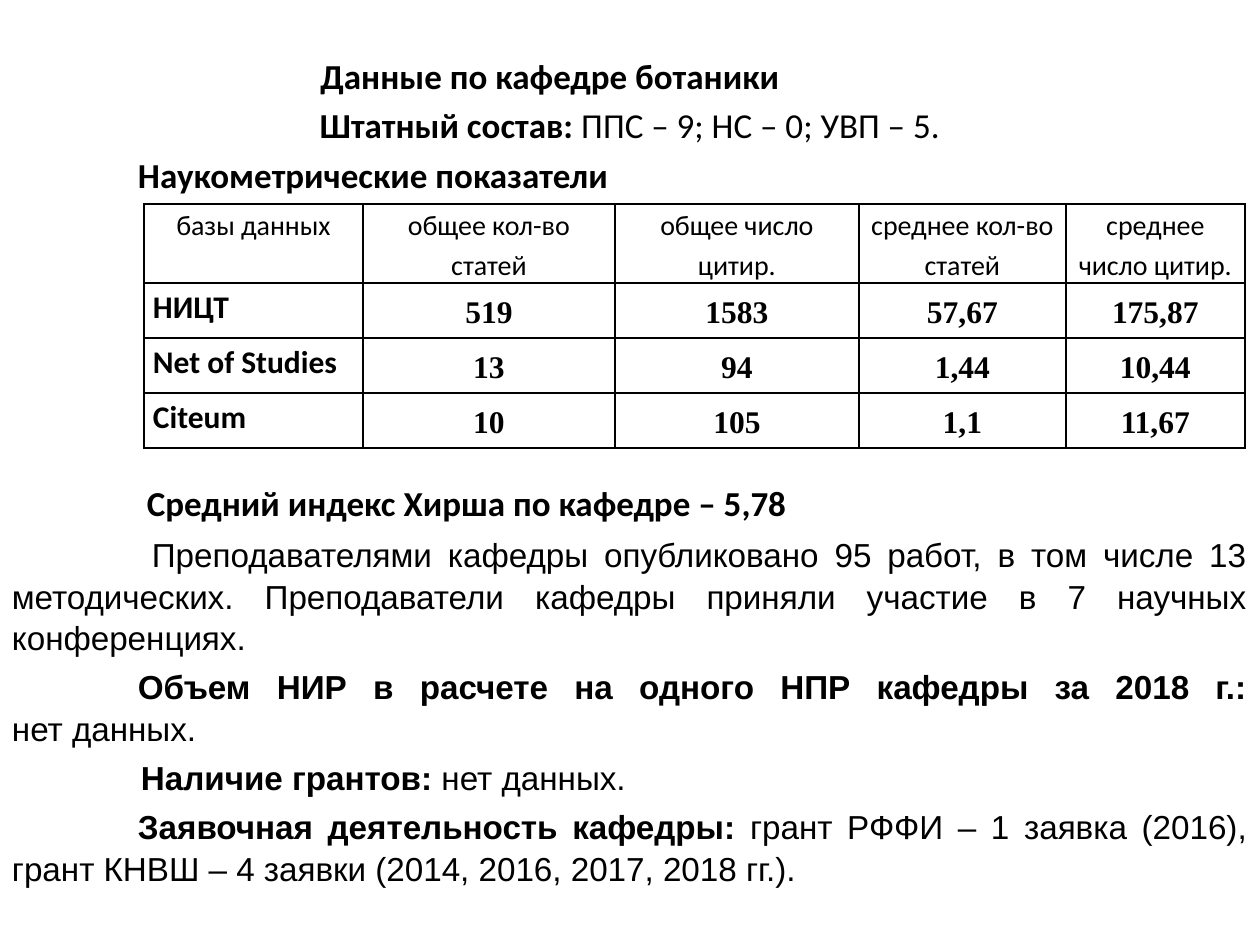
from lxml import etree
from pptx import Presentation
from pptx.dml.color import RGBColor
from pptx.enum.text import MSO_ANCHOR, PP_ALIGN
from pptx.oxml.ns import qn
from pptx.util import Pt

PX = 914400 // 126
LEFT, CENTER, JUSTIFY = PP_ALIGN.LEFT, PP_ALIGN.CENTER, PP_ALIGN.JUSTIFY
TOP, MIDDLE = MSO_ANCHOR.TOP, MSO_ANCHOR.MIDDLE


def px(n):
    return n * PX


def rgb(color):
    return RGBColor.from_string(color)


class Deck:
    ink = "000000"
    head_font, body_font, number_font = "Calibri", "Arial", "Times New Roman"

    def __init__(self, prs):
        self.s = prs.slides.add_slide(prs.slide_layouts[6])

    def run(self, p, text, font, size, bold):
        r = p.add_run()
        r.text = text
        r.font.name, r.font.size, r.font.bold = font, Pt(size), bold
        r.font.color.rgb = rgb(self.ink)

    def box(self, x, y, w, h):
        tf = self.s.shapes.add_textbox(px(x), px(y), px(w), px(h)).text_frame
        tf.word_wrap = True
        tf.margin_left = tf.margin_top = tf.margin_right = tf.margin_bottom = 0
        return tf

    def heading(self, x, y, w, align, runs):
        p = self.box(x, y, w, 43).paragraphs[0]
        p.alignment = align
        for text, bold in runs:
            self.run(p, text, self.head_font, 20, bold)

    def body(self, x, y, w, h, paragraphs):
        tf = self.box(x, y, w, h)
        for i, (indent, runs) in enumerate(paragraphs):
            p = tf.add_paragraph() if i else tf.paragraphs[0]
            p.alignment, p.line_spacing = JUSTIFY, 1.05
            p.space_before = Pt(4 if i else 0)
            pPr = p._p.get_or_add_pPr()
            pPr.set("marL", "0")
            pPr.set("indent", str(px(indent)))
            for text, bold in runs:
                if text == "\n":
                    p.add_line_break()
                else:
                    self.run(p, text, self.body_font, 19, bold)

    def border(self, cell):
        tcPr = cell._tc.get_or_add_tcPr()
        for side in ("lnL", "lnR", "lnT", "lnB"):
            ln = etree.SubElement(tcPr, qn("a:" + side), w=str(Pt(1)))
            fill = etree.SubElement(ln, qn("a:solidFill"))
            etree.SubElement(fill, qn("a:srgbClr"), val=self.ink)

    def cell(self, cell, text, font, size, bold, align, anchor):
        self.border(cell)
        cell.fill.background()
        cell.margin_left = cell.margin_right = px(9)
        cell.margin_top = cell.margin_bottom = 0
        cell.vertical_anchor = anchor
        p = cell.text_frame.paragraphs[0]
        p.alignment, p.line_spacing = align, 1.15
        self.run(p, text, font, size, bold)

    def table(self, x, y, widths, heights, rows):
        t = self.s.shapes.add_table(len(rows), len(widths), px(x), px(y),
                                    px(sum(widths)), px(sum(heights))).table
        t.first_row = t.horz_banding = False
        for col, w in zip(t.columns, widths):
            col.width = px(w)
        for i, (h, row) in enumerate(zip(heights, rows)):
            t.rows[i].height = px(h)
            for j, text in enumerate(row):
                if i == 0:
                    style = self.head_font, 16, False, CENTER, TOP
                elif j == 0:
                    style = self.head_font, 18, True, JUSTIFY, TOP
                else:
                    style = self.number_font, 18, True, CENTER, MIDDLE
                self.cell(t.cell(i, j), text, *style)


def main():
    prs = Presentation()
    prs.slide_width, prs.slide_height = px(1260), px(945)
    deck = Deck(prs)

    deck.heading(0, 54, 1100, CENTER, [("Данные по кафедре ботаники", True)])
    deck.heading(0, 103, 1260, CENTER, [
        ("Штатный состав:", True), (" ППС – 9; НС – 0; УВП – 5.", False)])
    deck.heading(138, 153, 1100, LEFT, [("Наукометрические показатели", True)])

    deck.table(144, 204, [219, 252, 244, 207, 179], [79, 55, 55, 55], [
        ["базы данных", "общее кол-во статей", "общее число цитир.",
         "среднее кол-во статей", "среднее число цитир."],
        ["НИЦТ", "519", "1583", "57,67", "175,87"],
        ["Net of Studies", "13", "94", "1,44", "10,44"],
        ["Citeum", "10", "105", "1,1", "11,67"],
    ])

    deck.heading(147, 482, 1100, LEFT, [
        ("Средний индекс Хирша по кафедре – 5,78", True)])
    deck.body(12, 532, 1235, 345, [
        (140, [("Преподавателями кафедры опубликовано 95 работ, в том числе 13 "
                "методических. Преподаватели кафедры приняли участие в 7 научных "
                "конференциях.", False)]),
        (126, [("Объем НИР в расчете на одного НПР кафедры за 2018 г.:", True),
               ("\n", False), ("нет данных.", False)]),
        (129, [("Наличие грантов: ", True), ("нет данных.", False)]),
        (126, [("Заявочная деятельность кафедры: ", True),
               ("грант РФФИ – 1 заявка (2016), грант КНВШ – 4 заявки "
                "(2014, 2016, 2017, 2018 гг.).", False)]),
    ])
    prs.save("out.pptx")


if __name__ == "__main__":
    main()
